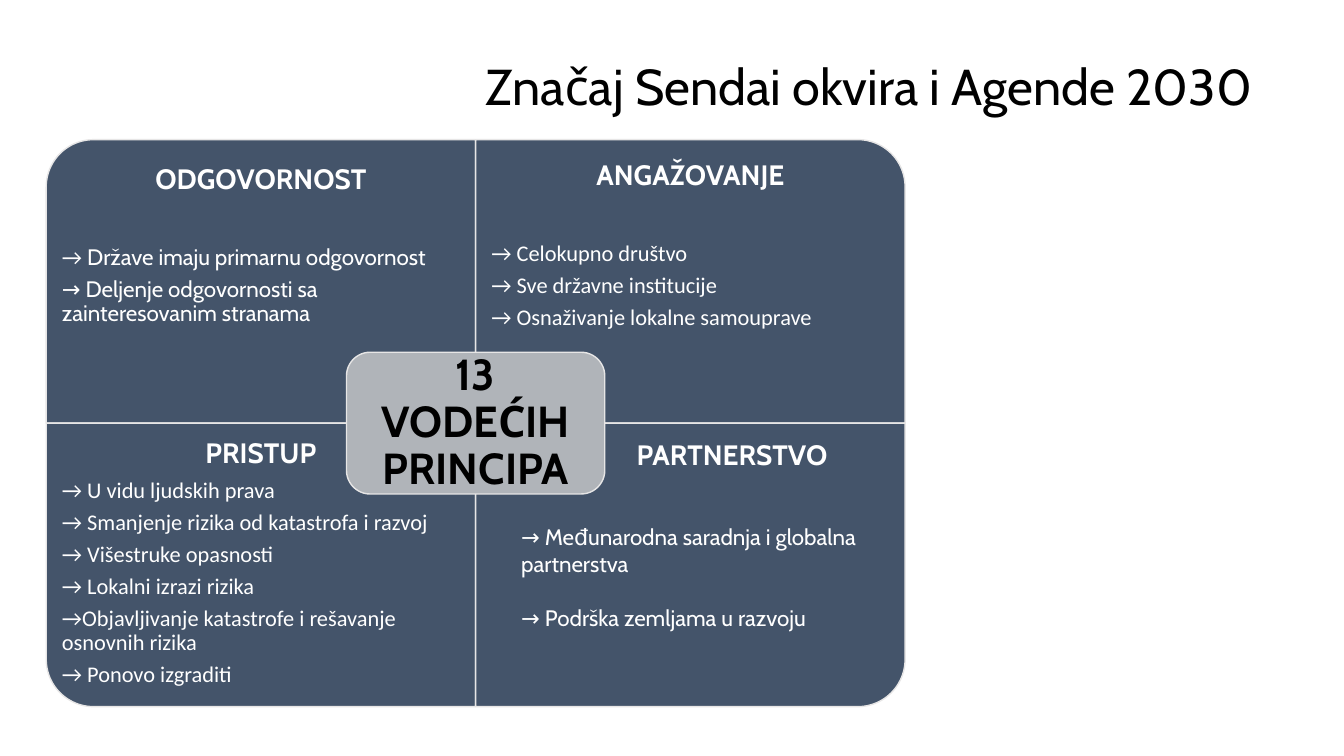
import pptx
import pptx.dml.color
import pptx.enum.shapes
import pptx.enum.text
import pptx.util

PX = 9525
SLIDE_W, SLIDE_H = 1280, 720
LEFT, TOP = 44, 133
CELL_W, CELL_H = 409, 270
MID_X, MID_Y = LEFT + CELL_W, TOP + CELL_H
TEXT_H = 202

SHAPES = pptx.enum.shapes.MSO_SHAPE
ANCHOR = pptx.enum.text.MSO_ANCHOR
ALIGN = pptx.enum.text.PP_ALIGN

HEADING = {"name": "Cabin", "size": pptx.util.Pt(20), "bold": True}
CABIN = {"name": "Cabin", "size": pptx.util.Pt(16), "bold": False}
CALIBRI = {"name": "Calibri", "size": pptx.util.Pt(16), "bold": False}
CENTER = {"name": "Cabin", "size": pptx.util.Pt(31), "bold": True}
TITLE = {"name": "Cabin", "size": pptx.util.Pt(36), "bold": False}

RESPONSIBILITY = [
    [("→ ", CALIBRI), ("Države imaju primarnu odgovornost", CABIN)],
    [("→ Deljenje odgovornosti sa zainteresovanim stranama", CABIN)],
]
ENGAGEMENT = [
    "→ Celokupno društvo",
    "→ Sve državne institucije",
    "→ Osnaživanje lokalne samouprave",
]
APPROACH = [
    "→ U vidu ljudskih prava",
    "→ Smanjenje rizika od katastrofa i razvoj",
    "→ Višestruke opasnosti",
    "→ Lokalni izrazi rizika",
    "→Objavljivanje katastrofe i rešavanje osnovnih rizika",
    "→ Ponovo izgraditi",
]
PARTNERSHIP = [
    "→ Međunarodna saradnja i globalna partnerstva",
    "→ Podrška zemljama u razvoju",
]


def px(*lengths):
    """Turn pixel lengths into EMU."""
    return [pptx.util.Emu(round(length * PX)) for length in lengths]


def color(hex_value):
    """Return the RGB colour for a hex string."""
    return pptx.dml.color.RGBColor.from_string(hex_value)


def apply(target, values):
    """Set every attribute named in values on the target."""
    for name, value in values.items():
        setattr(target, name, value)


def format_frame(frame, anchor, inset=None):
    """Set wrapping, anchor and, if given, an equal inset on all sides."""
    values = {"word_wrap": True, "vertical_anchor": anchor,
              "auto_size": pptx.enum.text.MSO_AUTO_SIZE.NONE}
    if inset is not None:
        sides = ("left", "right", "top", "bottom")
        values.update({f"margin_{side}": px(inset)[0] for side in sides})
    apply(frame, values)


def write(paragraph, runs, ink="FFFFFF", align=ALIGN.LEFT, spacing=0.9, after=0):
    """Fill a paragraph with (text, font) runs."""
    apply(paragraph, {"alignment": align, "line_spacing": spacing,
                      "space_after": pptx.util.Pt(after)})
    for text, font in runs:
        run = paragraph.add_run()
        run.text = text
        apply(run.font, font)
        run.font.color.rgb = color(ink)


def add_panel(slide, kind, center, size, fill, rotation=0):
    """Add an outlined panel around a centre point."""
    (x, y), (width, height) = center, size
    panel = slide.shapes.add_shape(
        kind, *px(x - width / 2, y - height / 2, width, height))
    panel.rotation = rotation
    panel.shadow.inherit = False
    panel.fill.solid()
    panel.fill.fore_color.rgb = color(fill)
    panel.line.color.rgb = color("E7E6E6")
    panel.line.width = pptx.util.Pt(1)
    return panel


def add_quadrants(slide):
    """Add four panels whose rounded corners point outward."""
    for column, row, rotation in ((0, 0, 270), (1, 0, 0), (0, 1, 180), (1, 1, 90)):
        center = (LEFT + CELL_W * (column + 0.5), TOP + CELL_H * (row + 0.5))
        size = (CELL_H, CELL_W) if rotation % 180 else (CELL_W, CELL_H)
        add_panel(slide, SHAPES.ROUND_1_RECTANGLE, center, size, "44546A", rotation)


def add_text(slide, box, paragraphs, anchor=ANCHOR.TOP, inset=None):
    """Add a text box with one dict of write() arguments per paragraph."""
    frame = slide.shapes.add_textbox(*px(*box)).text_frame
    format_frame(frame, anchor, inset)
    for index, values in enumerate(paragraphs):
        paragraph = frame.add_paragraph() if index else frame.paragraphs[0]
        write(paragraph, **values)


def add_principle(slide, box, heading, points, anchor, heading_gap):
    """Add a centred heading with its points below."""
    paragraphs = [{"runs": [(heading, HEADING)], "align": ALIGN.CENTER,
                   "after": heading_gap}]
    paragraphs += [{"runs": runs, "after": 5.6} for runs in points]
    add_text(slide, box, paragraphs, anchor, 15)


def calibri_points(lines):
    """Turn plain lines into single-run points."""
    return [[(line, CALIBRI)] for line in lines]


def add_title(slide, text):
    """Place and format the slide title."""
    title = slide.shapes.title
    title.left, title.top, title.width, title.height = px(453, 36, 794, 98)
    format_frame(title.text_frame, ANCHOR.MIDDLE)
    write(title.text_frame.paragraphs[0], [(text, TITLE)], "000000")


def main():
    """Build the slide and save it."""
    deck = pptx.Presentation()
    deck.slide_width, deck.slide_height = px(SLIDE_W, SLIDE_H)
    slide = deck.slides.add_slide(deck.slide_layouts[5])
    add_title(slide, "Značaj Sendai okvira i Agende 2030")
    add_quadrants(slide)
    add_principle(slide, (LEFT, TOP, CELL_W, TEXT_H), "ODGOVORNOST",
                  RESPONSIBILITY, ANCHOR.MIDDLE, 36)
    add_principle(slide, (MID_X, TOP, CELL_W, TEXT_H), "ANGAŽOVANJE",
                  calibri_points(ENGAGEMENT), ANCHOR.MIDDLE, 36)
    add_principle(slide, (LEFT, MID_Y, CELL_W, CELL_H), "PRISTUP",
                  calibri_points(APPROACH), ANCHOR.TOP, 7)
    hub = add_panel(slide, SHAPES.ROUNDED_RECTANGLE, (MID_X, MID_Y),
                    (246, 135), "B0B4B9")
    format_frame(hub.text_frame, ANCHOR.MIDDLE, 12)
    write(hub.text_frame.paragraphs[0], [("13 VODEĆIH PRINCIPA", CENTER)],
          "000000", ALIGN.CENTER)
    add_text(slide, (597, 412, 222, 42),
             [{"runs": [("PARTNERSTVO", HEADING)], "spacing": 1.0}])
    add_text(slide, (487, 494, 376, 139),
             [{"runs": [(line, CABIN)], "spacing": 1.0, "after": 19}
              for line in PARTNERSHIP])
    deck.save("out.pptx")


if __name__ == "__main__":
    main()
